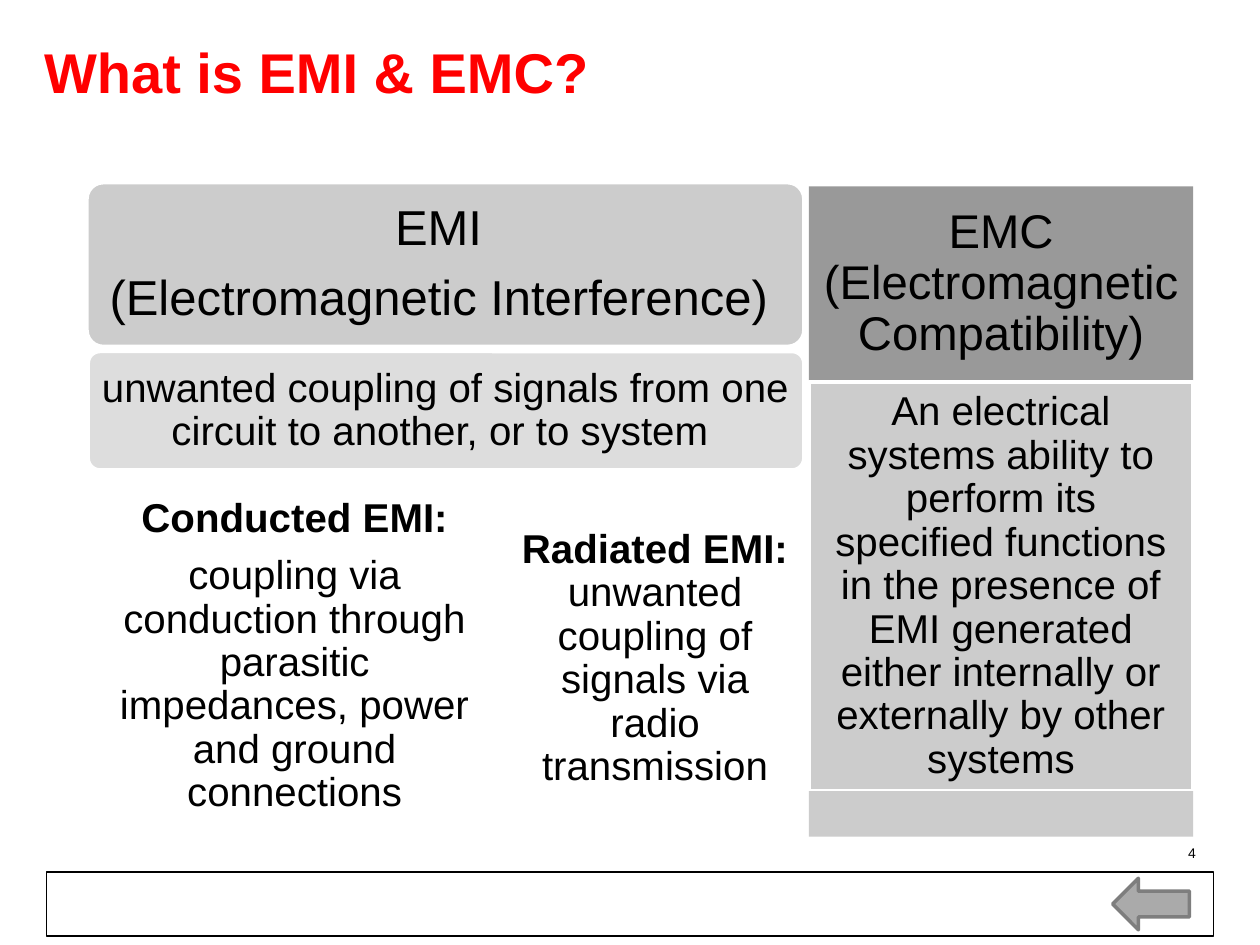
from dataclasses import dataclass

from pptx import Presentation
from pptx import util as u
from pptx.dml.color import RGBColor
from pptx.enum import shapes, text

COLORS = {
    "title": "FF0000",
    "ink": "000000",
    "paper": "FFFFFF",
    "heading": "999999",
    "panel": "CCCCCC",
    "light": "DDDDDD",
    "arrow": "AAAAAA",
    "arrow_edge": "7E7E7E",
}
FONT = "Arial"
COLUMNS, ROWS = 100, 75
WIDTH, HEIGHT = u.Inches(10), u.Inches(7.5)
CORNER = 0.1
CORNER_INSET = 0.29
RECT = shapes.MSO_SHAPE.RECTANGLE
ROUND = shapes.MSO_SHAPE.ROUNDED_RECTANGLE
ARROW = shapes.MSO_SHAPE.LEFT_ARROW


@dataclass(frozen=True)
class Area:
    column: float
    row: float
    columns: float
    rows: float

    def lengths(self) -> tuple[int, int, int, int]:
        return (
            round(self.column * WIDTH / COLUMNS),
            round(self.row * HEIGHT / ROWS),
            round(self.columns * WIDTH / COLUMNS),
            round(self.rows * HEIGHT / ROWS),
        )


@dataclass(frozen=True)
class Span:
    words: str
    bold: bool = False


@dataclass(frozen=True)
class Block:
    area: Area
    fill: str | None
    kind: int = RECT
    line: str | None = "paper"
    line_width: float = 2
    size: float = 23
    margin: float = 0.1
    paras: tuple[tuple[Span, ...], ...] = ()


def color(name: str) -> RGBColor:
    return RGBColor.from_string(COLORS[name])


def set_font(font, size: float, name: str) -> None:
    font.name = FONT
    font.size = u.Pt(size)
    font.color.rgb = color(name)


def write_block(box, block: Block) -> None:
    frame = box.text_frame
    frame.word_wrap = True
    frame.vertical_anchor = text.MSO_ANCHOR.MIDDLE
    margin = u.Inches(block.margin)
    if block.kind == ROUND:
        margin -= round(CORNER * CORNER_INSET * min(box.width, box.height))
    frame.margin_left = frame.margin_right = margin
    frame.margin_top = frame.margin_bottom = margin
    for index, spans in enumerate(block.paras):
        para = frame.add_paragraph() if index else frame.paragraphs[0]
        para.alignment = text.PP_ALIGN.CENTER
        para.line_spacing = 0.9
        para.space_after = u.Pt(round(0.35 * block.size))
        set_font(para.font, block.size, "ink")
        for span in spans:
            run = para.add_run()
            run.text = span.words
            run.font.bold = span.bold


def draw_block(page, block: Block) -> None:
    box = page.shapes.add_shape(block.kind, *block.area.lengths())
    box.shadow.inherit = False
    if block.kind == ROUND:
        box.adjustments[0] = CORNER
    if block.fill:
        box.fill.solid()
        box.fill.fore_color.rgb = color(block.fill)
    else:
        box.fill.background()
    if block.line:
        box.line.color.rgb = color(block.line)
        box.line.width = u.Pt(block.line_width)
    else:
        box.line.fill.background()
    if block.paras:
        write_block(box, block)


def draw_title(page, words: str, area: Area) -> None:
    title = page.shapes.title
    title.left, title.top, title.width, title.height = area.lengths()
    title.text_frame.text = words
    title.text_frame.vertical_anchor = text.MSO_ANCHOR.MIDDLE
    para = title.text_frame.paragraphs[0]
    para.alignment = text.PP_ALIGN.LEFT
    para.line_spacing = 0.85
    set_font(para.font, 32, "title")
    para.font.bold = True


def draw_page_number(page, number: str, area: Area) -> None:
    box = page.shapes.add_textbox(*area.lengths())
    box.text_frame.word_wrap = True
    para = box.text_frame.paragraphs[0]
    para.text = number
    para.alignment = text.PP_ALIGN.RIGHT
    set_font(para.font, 8, "ink")


FOOTER = Block(Area(3.7, 69.2, 92.6, 5.1), None, line="ink", line_width=0.75)

EMI = (
    Block(Area(6.9, 14.5, 56.9, 13), "panel", ROUND, size=28, margin=0.12, paras=(
        (Span("EMI "),),
        (Span("(Electromagnetic Interference) "),),
    )),
    Block(Area(7, 27.9, 56.8, 9.4), "light", ROUND, paras=(
        (Span("unwanted coupling of signals from one circuit to another, or to system "),),
    )),
    Block(Area(7.4, 37.7, 32, 28.8), "paper", ROUND, paras=(
        (Span("Conducted EMI:", True),),
        (Span("coupling via conduction through parasitic impedances, "
              "power and ground connections"),),
    )),
    Block(Area(40.4, 38.2, 23.2, 28.2), "paper", ROUND, paras=(
        (Span("Radiated EMI: ", True),
         Span("unwanted coupling of signals via radio transmission")),
    )),
)

EMC = (
    Block(Area(64.2, 14.8, 30.5, 15.5), "heading", line=None, size=27, margin=0.11, paras=(
        (Span("EMC (Electromagnetic Compatibility)"),),
    )),
    Block(Area(64.2, 30.3, 30.5, 32.5), "panel", paras=(
        (Span("An electrical systems ability to perform its specified functions "
              "in the presence of EMI generated either internally or externally "
              "by other systems"),),
    )),
    Block(Area(64.2, 62.8, 30.5, 3.6), "panel", line=None),
)

BACK_ARROW = Block(Area(88.3, 69.7, 6.1, 4.1), "arrow", ARROW, line="arrow_edge")


def main() -> None:
    deck = Presentation()
    deck.slide_width, deck.slide_height = WIDTH, HEIGHT
    page = deck.slides.add_slide(deck.slide_layouts[5])
    draw_title(page, "What is EMI & EMC?", Area(2.5, 1.6, 92.5, 8.9))
    draw_page_number(page, "4", Area(72.6, 66.5, 23.3, 2.3))
    for block in (FOOTER, *EMI, *EMC, BACK_ARROW):
        draw_block(page, block)
    deck.save("out.pptx")


if __name__ == "__main__":
    main()
